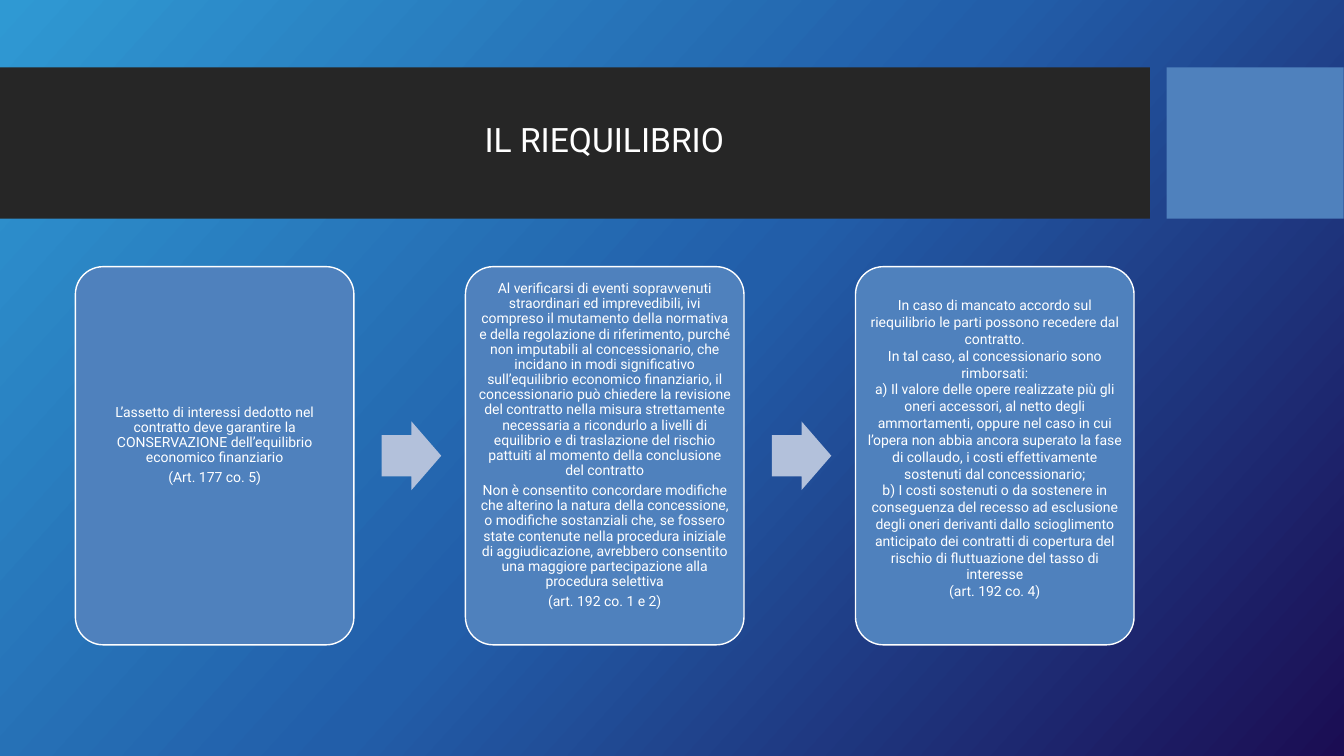
import copy

import pptx
import pptx.dml.color
import pptx.enum.shapes
import pptx.enum.text
import pptx.util
from pptx.util import Cm

SHAPE = pptx.enum.shapes.MSO_SHAPE
FONT_NAME = "Roboto"
COLOURS = {
    "sky": "2F99D3",
    "ocean": "225EA9",
    "night": "1B0D53",
    "band": "262626",
    "card": "4F81BD",
    "arrow": "B3C1DB",
    "white": "FFFFFF",
}
TIGHT = {"line_spacing": 0.9, "space_after": pptx.util.Pt(3.5)}
PLAIN = {"line_spacing": 1.0, "space_after": pptx.util.Pt(0)}

# Each step: paragraphs, paragraph format, bottom margin in cm
STEPS = [
    ([
        "L’assetto di interessi dedotto nel contratto deve garantire la CONSERVAZIONE "
        "dell’equilibrio economico finanziario",
        "(Art. 177 co. 5)",
    ], TIGHT, 0.61),
    ([
        "Al verificarsi di eventi sopravvenuti straordinari ed imprevedibili, ivi compreso "
        "il mutamento della normativa e della regolazione di riferimento, purché non "
        "imputabili al concessionario, che incidano in modi significativo sull’equilibrio "
        "economico finanziario, il concessionario può chiedere la revisione del contratto "
        "nella misura strettamente necessaria a ricondurlo a livelli di equilibrio e di "
        "traslazione del rischio pattuiti al momento della conclusione del contratto",
        "Non è consentito concordare modifiche che alterino la natura della concessione, o "
        "modifiche sostanziali che, se fossero state contenute nella procedura iniziale di "
        "aggiudicazione, avrebbero consentito una maggiore partecipazione alla procedura "
        "selettiva",
        "(art. 192 co. 1 e 2)",
    ], TIGHT, 0.61),
    ([
        "In caso di mancato accordo sul riequilibrio le parti possono recedere dal contratto.",
        "In tal caso, al concessionario sono rimborsati:",
        "a) Il valore delle opere realizzate più gli oneri accessori, al netto degli "
        "ammortamenti, oppure nel caso in cui l’opera non abbia ancora superato la fase di "
        "collaudo, i costi effettivamente sostenuti dal concessionario;",
        "b) I costi sostenuti o da sostenere in conseguenza del recesso ad esclusione degli "
        "oneri derivanti dallo scioglimento anticipato dei contratti di copertura del "
        "rischio di fluttuazione del tasso di interesse",
        "(art. 192 co. 4)",
    ], PLAIN, 0.48),
]
CARD_LEFT, CARD_PITCH = 1.9, 9.83
ARROW_OFFSET = 7.72


def colour(name):
    return pptx.dml.color.RGBColor.from_string(COLOURS[name])


def set_attributes(target, values):
    for name, value in values.items():
        setattr(target, name, value)


def paint_background(slide):
    """Diagonal gradient with three stops."""
    fill = slide.background.fill
    fill.gradient()
    fill.gradient_angle = 318
    first_stop = next(slide.element.iter("{*}gs"))
    first_stop.addnext(copy.deepcopy(first_stop))
    for stop, name, position in zip(fill.gradient_stops, ("sky", "ocean", "night"), (0, 0.5, 1)):
        stop.color.rgb = colour(name)
        stop.position = position


def add_block(slide, kind, box, fill_name, adjustments=()):
    """Filled preset shape without outline or shadow."""
    shape = slide.shapes.add_shape(kind, *[Cm(length) for length in box])
    shape.shadow.inherit = False
    shape.fill.solid()
    shape.fill.fore_color.rgb = colour(fill_name)
    shape.line.fill.background()
    for index, value in enumerate(adjustments):
        shape.adjustments[index] = value
    return shape


def write_paragraphs(text_frame, texts, size, paragraph_format):
    text_frame.text = "\n".join(texts)
    for paragraph in text_frame.paragraphs:
        set_attributes(paragraph, {
            "alignment": pptx.enum.text.PP_ALIGN.CENTER,
            "space_before": pptx.util.Pt(0),
            **paragraph_format,
        })
        set_attributes(paragraph.font, {"name": FONT_NAME, "size": pptx.util.Pt(size)})
        paragraph.font.color.rgb = colour("white")


def write_title(slide):
    title = slide.shapes.title
    set_attributes(title, {"left": Cm(1.88), "top": Cm(2.08), "width": Cm(26.7), "height": Cm(3)})
    title.text_frame.vertical_anchor = pptx.enum.text.MSO_ANCHOR.MIDDLE
    write_paragraphs(title.text_frame, ["IL RIEQUILIBRIO"], 24, {"line_spacing": 0.9})


def add_bands(slide):
    """Header bands, placed behind the title."""
    for left, width, fill_name in ((0, 28.98, "band"), (29.4, 4.46, "card")):
        band = add_block(slide, SHAPE.RECTANGLE, (left, 1.7, width, 3.81), fill_name)
        slide.shapes.title.element.addprevious(band.element)


def add_card(slide, left, texts, paragraph_format, bottom_margin):
    card = add_block(slide, SHAPE.ROUNDED_RECTANGLE, (left, 6.72, 7.02, 9.53), "card", [0.1])
    card.line.color.rgb = colour("white")
    card.line.width = pptx.util.Pt(1)
    set_attributes(card.text_frame, {
        "word_wrap": True,
        "vertical_anchor": pptx.enum.text.MSO_ANCHOR.MIDDLE,
        "margin_left": Cm(0.1),
        "margin_right": Cm(0.1),
        "margin_top": Cm(0.1),
        "margin_bottom": Cm(bottom_margin),
    })
    write_paragraphs(card.text_frame, texts, 10, paragraph_format)


def main():
    presentation = pptx.Presentation()
    set_attributes(presentation, {"slide_width": Cm(33.87), "slide_height": Cm(19.05)})
    slide = presentation.slides.add_slide(presentation.slide_layouts[5])

    # Background and header
    paint_background(slide)
    add_bands(slide)
    write_title(slide)

    # Process steps, with an arrow before every card but the first
    for index, step in enumerate(STEPS):
        left = CARD_LEFT + index * CARD_PITCH
        if index:
            arrow_left = left - CARD_PITCH + ARROW_OFFSET
            add_block(slide, SHAPE.RIGHT_ARROW, (arrow_left, 10.62, 1.5, 1.73), "arrow", [0.6, 0.5])
        add_card(slide, left, *step)

    presentation.save("out.pptx")


if __name__ == "__main__":
    main()
